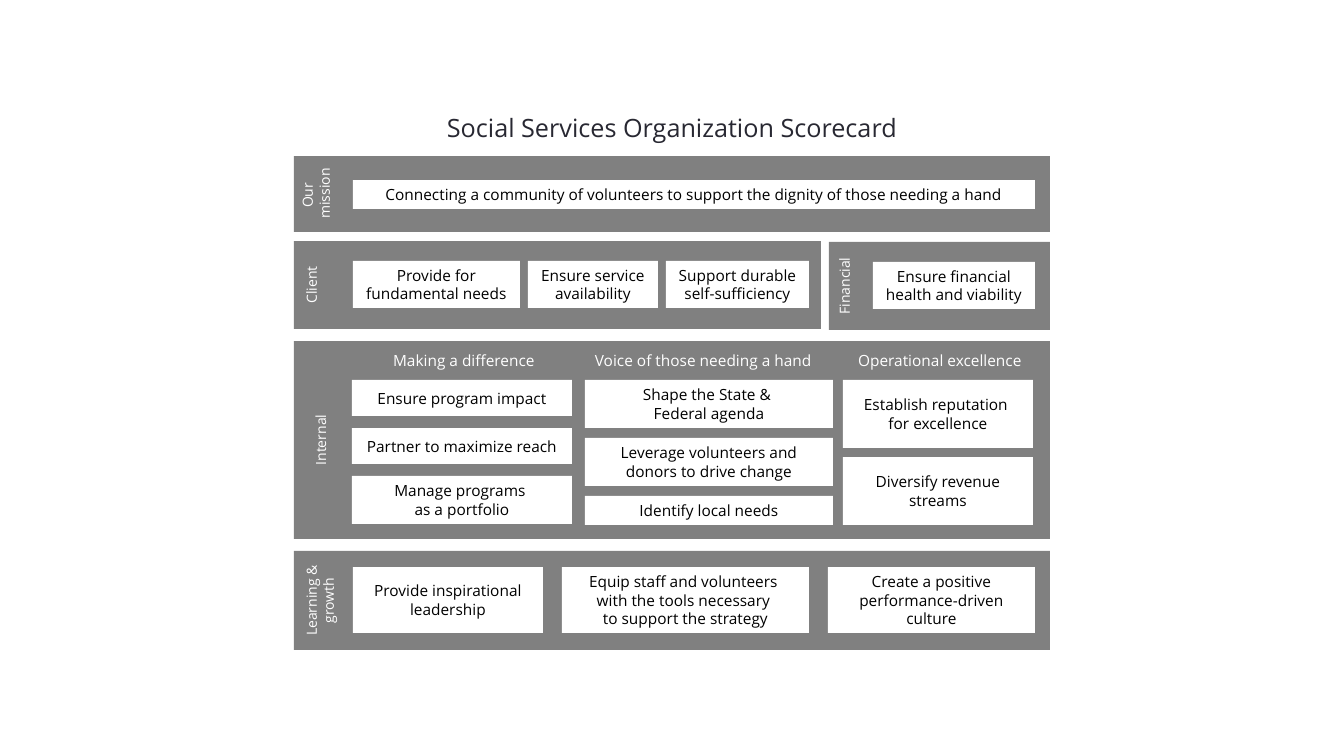
from copy import deepcopy

from pptx import Presentation
from pptx.dml.color import RGBColor
from pptx.enum.shapes import MSO_SHAPE as Preset
from pptx.enum.text import MSO_ANCHOR as Anchor, MSO_AUTO_SIZE as AutoSize, PP_ALIGN as Align
from pptx.util import Emu, Pt

PX = 914400 / 100.8
FONT = "Open Sans"
COLORS = {"title": "282832", "band": "808080", "card": "FFFFFF",
          "card_text": "000000", "label": "FFFFFF"}


def place(box):
    """Turn a px box into EMU lengths."""
    return [Emu(round(length * PX)) for length in box]


def write(frame, text, size, color, align=Align.CENTER, anchor=Anchor.TOP):
    """Fill a text frame with one paragraph, one run per line."""
    frame.word_wrap = True
    frame.auto_size = AutoSize.NONE
    frame.vertical_anchor = anchor
    paragraph = frame.paragraphs[0]
    paragraph.alignment = align
    for index, line in enumerate(text.split("\n")):
        if index:
            paragraph.add_line_break()
            paragraph._p.br_lst[-1].append(deepcopy(run._r.rPr))
        run = paragraph.add_run()
        run.text = line
        run.font.name = FONT
        run.font.size = Pt(size)
        run.font.color.rgb = RGBColor.from_string(COLORS[color])


def add_block(slide, box, color):
    """Draw a flat rectangle."""
    block = slide.shapes.add_shape(Preset.RECTANGLE, *place(box))
    block.shadow.inherit = False
    block.fill.solid()
    block.fill.fore_color.rgb = RGBColor.from_string(COLORS[color])
    block.line.fill.background()
    return block


def add_card(slide, box, text):
    """Draw a white objective card."""
    card = add_block(slide, box, "card")
    write(card.text_frame, text, 11, "card_text", anchor=Anchor.MIDDLE)


def add_heading(slide, box, text, align):
    """Write the theme above a column of cards."""
    heading = slide.shapes.add_textbox(*place(box))
    write(heading.text_frame, text, 11, "label", align)


def add_band(slide, box, label, label_box, anchor=Anchor.TOP):
    """Draw a perspective band with its upright label."""
    left, top, _, _ = box
    dx, dy, width, height = label_box
    add_block(slide, box, "band")
    perspective = slide.shapes.add_textbox(*place((left + dx, top + dy, width, height)))
    write(perspective.text_frame, label, 10, "label", anchor=anchor)
    perspective.text_frame._txBody.bodyPr.set("vert", "vert270")


def add_row(slide, box, gap, cards):
    """Lay cards of given widths side by side."""
    left, top, height = box
    for width, text in cards:
        add_card(slide, (left, top, width, height), text)
        left += width + gap


def add_column(slide, box, gap, cards):
    """Stack cards of given heights."""
    left, top, width = box
    for height, text in cards:
        add_card(slide, (left, top, width, height), text)
        top += height + gap


def add_title(slide, box):
    """Place the slide title."""
    title = slide.shapes.title
    title.left, title.top, title.width, title.height = place(box)
    write(title.text_frame, "Social Services Organization Scorecard", 18, "title")


def add_mission(slide, box):
    """Build the mission band."""
    left, top, _, _ = box
    add_band(slide, box, "Our \nmission", (0, -12, 54, 99))
    add_row(slide, (left + 59, top + 24, 29), 0, [
        (682, "Connecting a community of volunteers to support the dignity of those needing a hand")])


def add_client(slide, box):
    """Build the client band."""
    left, top, _, height = box
    add_band(slide, box, "Client", (4, 0, 37, height))
    add_row(slide, (left + 59, top + 20, 47), 8, [
        (167, "Provide for fundamental needs"),
        (130, "Ensure service availability"),
        (143, "Support durable self-sufficiency")])


def add_financial(slide, box):
    """Build the financial band."""
    left, top, _, height = box
    add_band(slide, box, "Financial", (2, 0, 37, height))
    add_row(slide, (left + 44, top + 20, 47), 0, [(162, "Ensure financial health and viability")])


def add_internal(slide, box):
    """Build the internal band with its three themes."""
    left, top, _, _ = box
    add_band(slide, box, "Internal", (3, 20, 37, 158), Anchor.BOTTOM)
    themes = [
        ("Making a difference", Align.CENTER, 58, 220, 12, [
            (36, "Ensure program impact"),
            (36, "Partner to maximize reach"),
            (48, "Manage programs \nas a portfolio")]),
        ("Voice of those needing a hand", Align.LEFT, 291, 248, 10, [
            (48, "Shape the State & \nFederal agenda"),
            (48, "Leverage volunteers and donors to drive change"),
            (29, "Identify local needs")]),
        ("Operational excellence", Align.CENTER, 549, 190, 9, [
            (68, "Establish reputation \nfor excellence"),
            (68, "Diversify revenue streams")])]
    for theme, align, dx, width, gap, cards in themes:
        add_heading(slide, (left + dx, top + 5, width + 4, 29), theme, align)
        add_column(slide, (left + dx, top + 39, width), gap, cards)


def add_learning(slide, box):
    """Build the learning and growth band."""
    left, top, _, height = box
    add_band(slide, box, "Learning & growth", (4, 0, 54, height))
    add_row(slide, (left + 59, top + 16, 66), 19, [
        (190, "Provide inspirational leadership"),
        (247, "Equip staff and volunteers \nwith the tools necessary \nto support the strategy"),
        (207, "Create a positive performance-driven culture")])


def main():
    """Build and save the scorecard slide."""
    deck = Presentation()
    deck.slide_width, deck.slide_height = place((1344, 756))
    slide = deck.slides.add_slide(deck.slide_layouts.get_by_name("Title Only"))
    add_title(slide, (294, 107, 756, 40))
    add_mission(slide, (294, 156, 756, 76))
    add_client(slide, (294, 241, 527, 88))
    add_financial(slide, (829, 242, 221, 88))
    add_internal(slide, (294, 341, 756, 198))
    add_learning(slide, (294, 551, 756, 99))
    deck.save("out.pptx")


if __name__ == "__main__":
    main()
